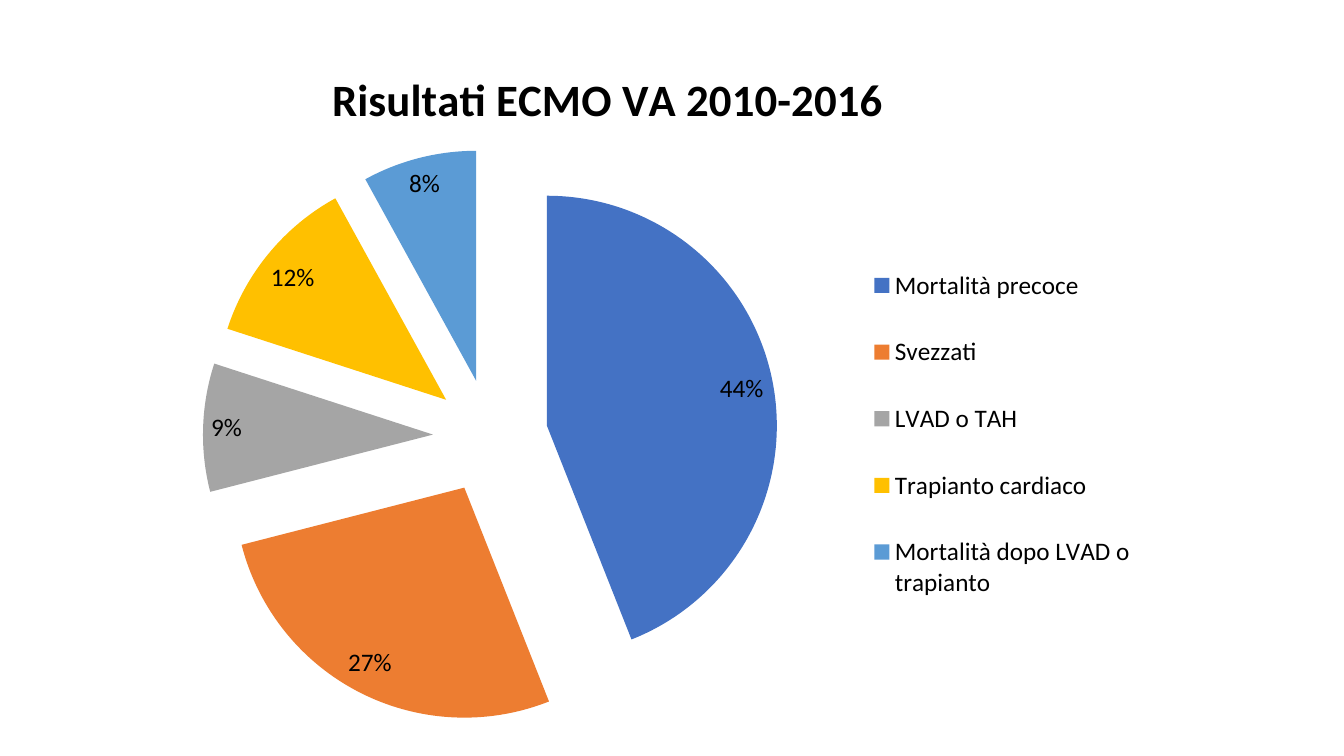
"""Build a slide with an exploded pie chart of ECMO VA results for 2010-2016."""
from lxml import etree
from pptx import Presentation
from pptx.chart.data import CategoryChartData
from pptx.dml.color import RGBColor
from pptx.enum.chart import XL_CHART_TYPE, XL_LABEL_POSITION, XL_LEGEND_POSITION
from pptx.oxml.ns import qn
from pptx.util import Pt

PIE = XL_CHART_TYPE.PIE
BEST_FIT = XL_LABEL_POSITION.BEST_FIT
RIGHT = XL_LEGEND_POSITION.RIGHT
PX = 914400 / 100.8
CHART_LEFT, CHART_TOP, CHART_WIDTH, CHART_HEIGHT = 94, 49, 1075, 688
BLANK_LAYOUT = 6

RESULTS = [
    ("Mortalità precoce", 44, "4472C4"),
    ("Svezzati", 27, "ED7D31"),
    ("LVAD o TAH", 9, "A5A5A5"),
    ("Trapianto cardiaco", 12, "FFC000"),
    ("Mortalità dopo LVAD o trapianto", 8, "5B9BD5"),
]


def style_font(font, size, color="000000", bold=False):
    """Set the typeface, size, colour and weight of a font."""
    font.name = "Calibri"
    font.size = Pt(size)
    font.bold = bold
    font.color.rgb = RGBColor.from_string(color)


def place_part(part, index, left, top, width=None, height=None):
    """Place a chart part at slide pixels through a manual layout."""
    for old_layout in part.findall(qn("c:layout")):
        part.remove(old_layout)
    layout = etree.Element(qn("c:layout"))
    part.insert(index, layout)
    manual = etree.SubElement(layout, qn("c:manualLayout"))
    settings = [("xMode", "edge"), ("yMode", "edge"),
                ("x", (left - CHART_LEFT) / CHART_WIDTH),
                ("y", (top - CHART_TOP) / CHART_HEIGHT)]
    if width:
        settings += [("w", width / CHART_WIDTH), ("h", height / CHART_HEIGHT)]
    for name, value in settings:
        etree.SubElement(manual, qn(f"c:{name}")).set("val", str(value))


presentation = Presentation()
presentation.slide_width = round(1344 * PX)
presentation.slide_height = round(756 * PX)
slide = presentation.slides.add_slide(presentation.slide_layouts[BLANK_LAYOUT])

chart_data = CategoryChartData()
chart_data.categories = [name for name, value, color in RESULTS]
chart_data.add_series("Series 1", [value for name, value, color in RESULTS])
chart_frame = [round(length * PX) for length in
               (CHART_LEFT, CHART_TOP, CHART_WIDTH, CHART_HEIGHT)]
chart = slide.shapes.add_chart(PIE, *chart_frame, chart_data).chart
style_font(chart.font, 18)

chart.has_title = True
title_frame = chart.chart_title.text_frame
title_frame.text = "Risultati ECMO VA 2010-2016"
style_font(title_frame.paragraphs[0].runs[0].font, 32, bold=True)

chart.has_legend = True
chart.legend.position = RIGHT
chart.legend.include_in_layout = False
style_font(chart.legend.font, 18)

plot = chart.plots[0]
plot.vary_by_categories = True
plot.has_data_labels = True
labels = plot.data_labels
labels.show_percentage = True
labels.show_value = False
labels.number_format = "0%"
labels.number_format_is_linked = False
labels.position = BEST_FIT
style_font(labels.font, 18)

series = plot.series[0]
for index, (name, value, color) in enumerate(RESULTS):
    fill = series.points[index].format.fill
    fill.solid()
    fill.fore_color.rgb = RGBColor.from_string(color)

explosion = etree.Element(qn("c:explosion"))
explosion.set("val", "25")
chart.element.find(".//" + qn("c:dPt")).addprevious(explosion)

place_part(chart.element.find(".//" + qn("c:title")), 1, 324, 60)
place_part(chart.element.find(".//" + qn("c:plotArea")), 0, 203, 149, 575, 575)
place_part(chart.element.find(".//" + qn("c:legend")), 1, 857, 234, 290, 400)

presentation.save("out.pptx")
